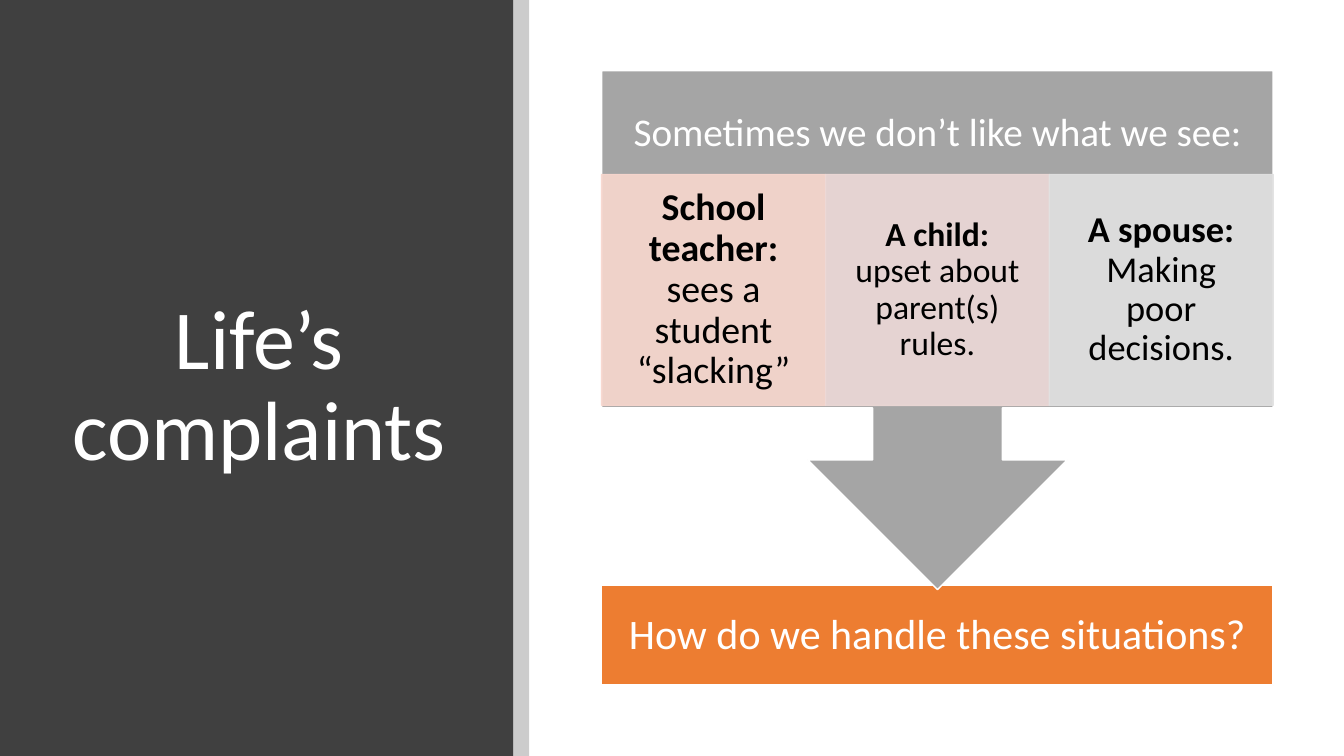
from dataclasses import dataclass

from pptx import Presentation
from pptx.dml.color import RGBColor
from pptx.enum.shapes import MSO_SHAPE
from pptx.enum.text import MSO_ANCHOR, MSO_AUTO_SIZE, PP_ALIGN
from pptx.oxml.ns import qn
from pptx.oxml.xmlchemy import OxmlElement
from pptx.shapes.autoshape import Shape
from pptx.slide import Slide
from pptx.util import Pt

RECT = MSO_SHAPE.RECTANGLE
CALLOUT = MSO_SHAPE.UP_ARROW_CALLOUT
MIDDLE = MSO_ANCHOR.MIDDLE
NO_FIT = MSO_AUTO_SIZE.NONE
CENTER = PP_ALIGN.CENTER

WHITE = RGBColor(0xFF, 0xFF, 0xFF)
BLACK = RGBColor(0x00, 0x00, 0x00)
DARK = RGBColor(0x40, 0x40, 0x40)
GRAY = RGBColor(0xA5, 0xA5, 0xA5)
ORANGE = RGBColor(0xED, 0x7D, 0x31)
PEACH = RGBColor(0xF8, 0xD7, 0xCE)
ROSE = RGBColor(0xED, 0xD9, 0xD7)
SILVER = RGBColor(0xE1, 0xE1, 0xE1)

FONT = "Calibri"
PANEL_W = 366.5
LEFT, WIDTH = 429.8, 479.6
TOP = 50.4
CASE_TOP, CASE_H = 124.6, 165


@dataclass(frozen=True)
class Box:
    left: float
    top: float
    width: float
    height: float

    def emu(self) -> tuple[Pt, Pt, Pt, Pt]:
        return Pt(self.left), Pt(self.top), Pt(self.width), Pt(self.height)


@dataclass(frozen=True)
class Case:
    who: str
    complaint: str
    size: float
    inset: float
    color: RGBColor


CASES = [
    Case("School teacher:", " sees a student “slacking”", 27, 15, PEACH),
    Case("A child: ", "upset about parent(s) rules.", 24, 13.5, ROSE),
    Case("A spouse: ", "Making poor decisions.", 26, 14.5, SILVER),
]


def add_block(s: Slide, kind: MSO_SHAPE, box: Box, fill: RGBColor,
              line: RGBColor | None = None, opacity: int = 100) -> Shape:
    sp = s.shapes.add_shape(kind, *box.emu())
    sp.shadow.inherit = False
    sp.fill.solid()
    sp.fill.fore_color.rgb = fill
    if line is None:
        sp.line.fill.background()
    else:
        sp.line.color.rgb = line
        sp.line.width = Pt(1)
    if opacity < 100:
        for color in list(sp.element.spPr.iter(qn("a:srgbClr"))):
            alpha = OxmlElement("a:alpha")
            alpha.set("val", str(opacity * 1000))
            color.append(alpha)
    return sp


def write(sp: Shape, runs: list[tuple[str, bool]], size: float,
          color: RGBColor, inset_x: float, inset_y: float) -> None:
    tf = sp.text_frame
    tf.word_wrap = True
    tf.auto_size = NO_FIT
    tf.vertical_anchor = MIDDLE
    tf.margin_left = tf.margin_right = Pt(inset_x)
    tf.margin_top = tf.margin_bottom = Pt(inset_y)
    p = tf.paragraphs[0]
    p.alignment = CENTER
    p.line_spacing = 0.9
    p.font.name = FONT
    p.font.size = Pt(size)
    p.font.color.rgb = color
    for text, bold in runs:
        r = p.add_run()
        r.text = text
        r.font.bold = bold


def add_title(s: Slide) -> None:
    panel = add_block(s, RECT, Box(0, 0, PANEL_W, 540), DARK)
    title = s.shapes.title
    title.left, title.top, title.width, title.height = Box(25.2, 64, 320, 425.6).emu()
    write(title, [("Life’s complaints", False)], 60, WHITE, 7.2, 3.6)
    panel.element.addnext(title.element)
    add_block(s, RECT, Box(PANEL_W, 0, 11.5, 540), BLACK, opacity=20)


def add_flow(s: Slide) -> None:
    question = add_block(s, RECT, Box(LEFT, 418.4, WIDTH, 71), ORANGE, WHITE)
    write(question, [("How do we handle these situations?", False)], 30, WHITE, 16.5, 16.5)

    callout = add_block(s, CALLOUT, Box(LEFT, TOP, WIDTH, 370.8), GRAY, WHITE)
    callout.rotation = 180
    heading = s.shapes.add_textbox(*Box(LEFT, TOP, WIDTH, 90).emu())
    write(heading, [("Sometimes we don’t like what we see:", False)], 28, WHITE, 16, 16)

    case_w = WIDTH / len(CASES)
    for i, case in enumerate(CASES):
        box = Box(LEFT + i * case_w, CASE_TOP, case_w, CASE_H)
        sp = add_block(s, RECT, box, case.color, case.color, opacity=90)
        write(sp, [(case.who, True), (case.complaint, False)],
              case.size, BLACK, case.inset, 2.6)


def main() -> None:
    prs = Presentation()
    prs.slide_width, prs.slide_height = Pt(960), Pt(540)
    s = prs.slides.add_slide(prs.slide_layouts[5])
    add_title(s)
    add_flow(s)
    prs.save("out.pptx")


if __name__ == "__main__":
    main()
